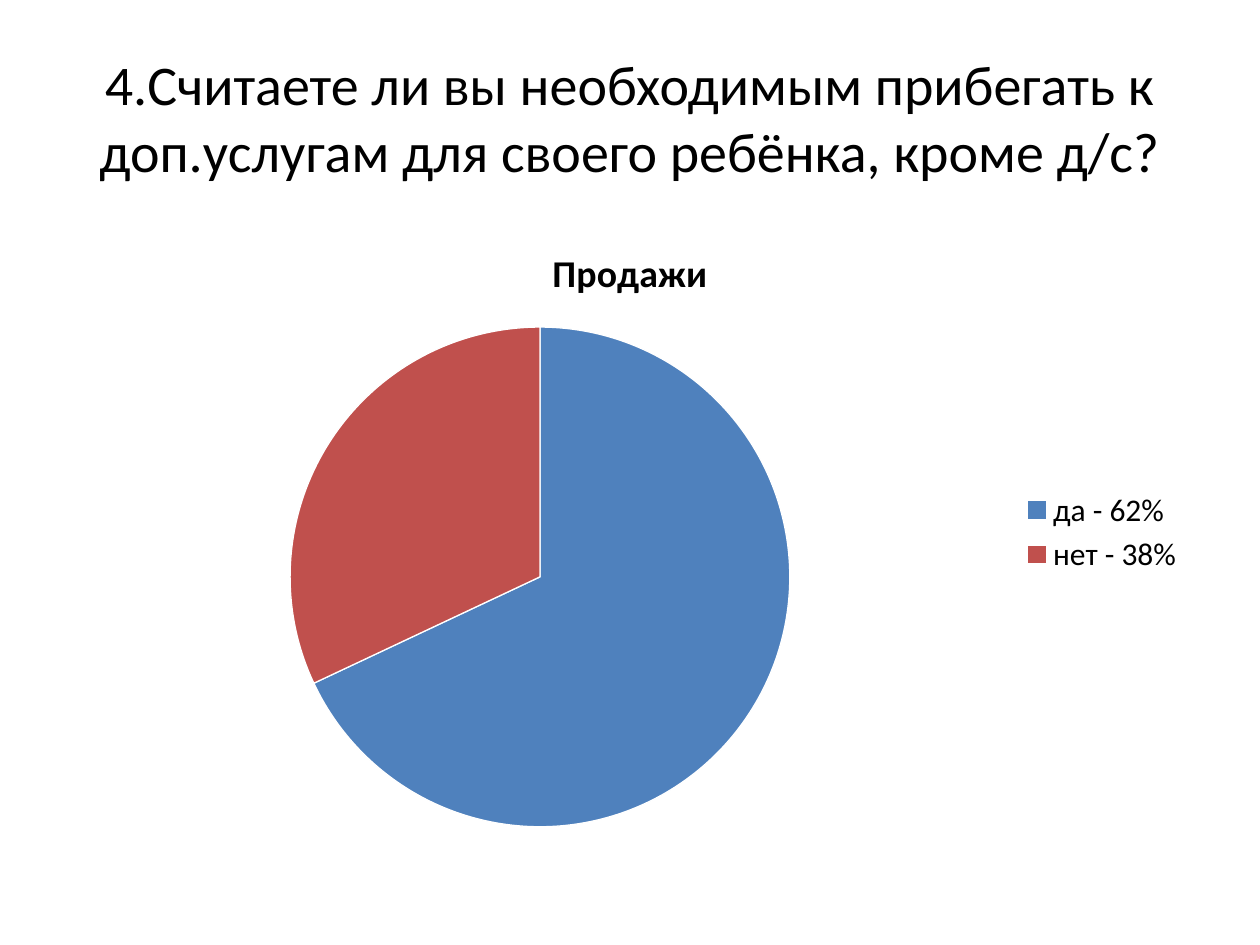
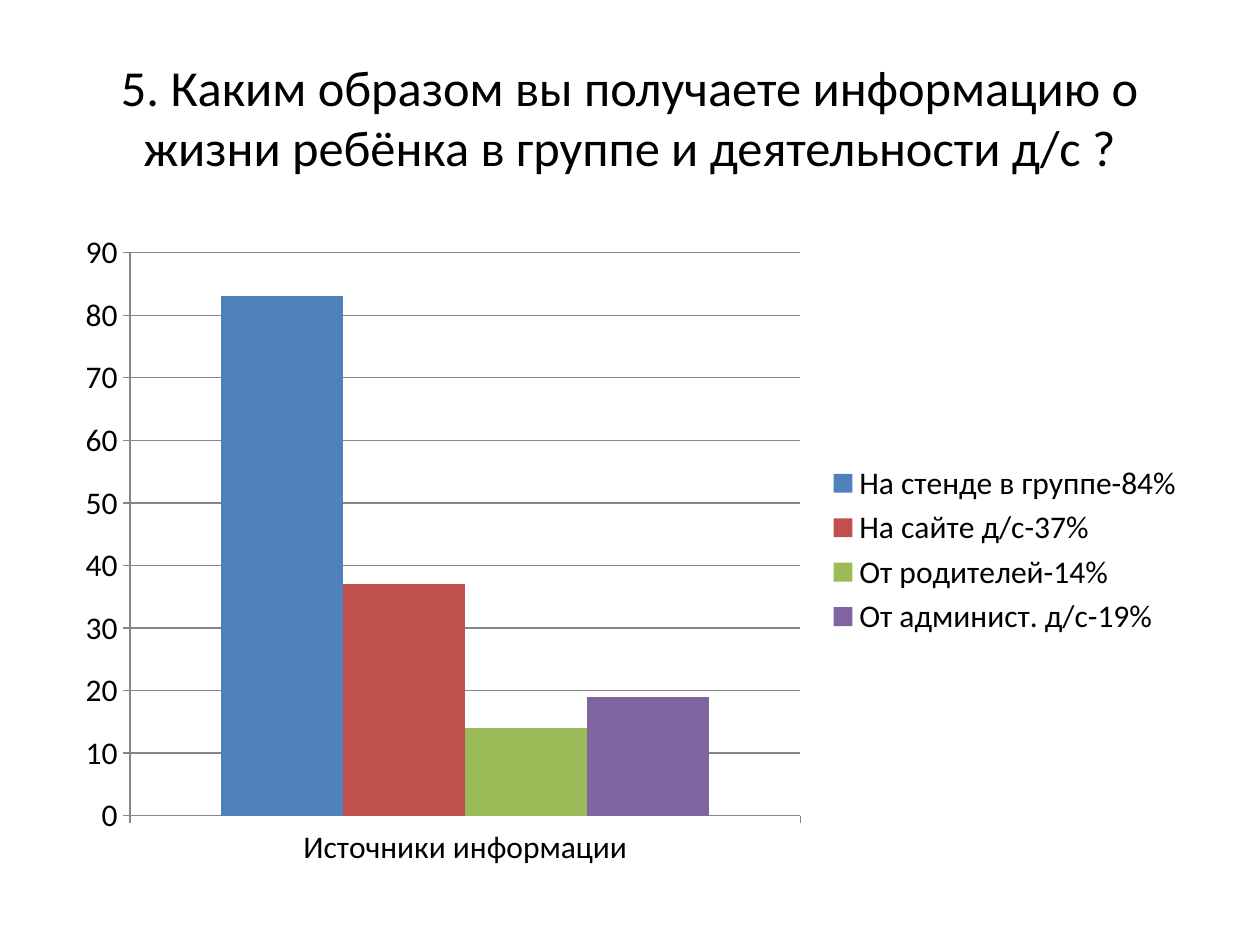
import pptx
import pptx.chart.data
import pptx.dml.color
import pptx.enum.chart
import pptx.enum.text
import pptx.util

Pt = pptx.util.Pt
CHART_TYPE = pptx.enum.chart.XL_CHART_TYPE

# Content
FONT = "Calibri"
COLORS = {"text": "000000", "axis": "868686", "paper": "FFFFFF",
          "blue": "4F81BD", "red": "C0504D", "green": "9BBB59", "violet": "8064A2"}
SERIES_COLORS = ("blue", "red", "green", "violet")

QUESTIONS = [
    {"question": "4.Считаете ли вы необходимым прибегать к доп.услугам "
                 "для своего ребёнка, кроме д/с?",
     "size": 32, "kind": CHART_TYPE.PIE, "height": 356.4,
     "categories": ["да - 62%", "нет - 38%"],
     "answers": [("Продажи", [68, 32])]},
    {"question": "5. Каким образом вы получаете информацию о жизни ребёнка "
                 "в группе и деятельности д/с ?",
     "size": 28.8, "kind": CHART_TYPE.COLUMN_CLUSTERED, "height": 376.56,
     "categories": ["Источники информации"],
     "answers": [("На стенде в группе-84%", [83]), ("На сайте д/с-37%", [37]),
                 ("От родителей-14%", [14]), ("От админист. д/с-19%", [19])]},
]

# Shared layout
LEFT, WIDTH = 36, 648
TITLE_TOP, TITLE_HEIGHT = 21.6, 90
CHART_TOP = 126


def rgb(name):
    return pptx.dml.color.RGBColor.from_string(COLORS[name])


def style_font(font, size, bold=False):
    font.name, font.size, font.bold = FONT, Pt(size), bold
    font.color.rgb = rgb("text")


def paint(part, color):
    part.format.fill.solid()
    part.format.fill.fore_color.rgb = rgb(color)


def add_question(slide, text, size):
    title = slide.shapes.title
    title.left, title.top = Pt(LEFT), Pt(TITLE_TOP)
    title.width, title.height = Pt(WIDTH), Pt(TITLE_HEIGHT)
    frame = title.text_frame
    frame.text = text
    frame.word_wrap = True
    frame.auto_size = pptx.enum.text.MSO_AUTO_SIZE.NONE
    frame.vertical_anchor = pptx.enum.text.MSO_ANCHOR.MIDDLE
    frame.paragraphs[0].alignment = pptx.enum.text.PP_ALIGN.CENTER
    style_font(frame.paragraphs[0].runs[0].font, size)


def style_pie(chart):
    answers = chart.plots[0].series[0]
    chart.has_title = True
    heading = chart.chart_title.text_frame
    heading.text = answers.name
    style_font(heading.paragraphs[0].runs[0].font, 21.6, bold=True)
    chart.plots[0].vary_by_categories = True
    for index, _ in enumerate(answers.values):
        slice_ = answers.points[index]
        paint(slice_, SERIES_COLORS[index])
        slice_.format.line.color.rgb = rgb("paper")
        slice_.format.line.width = Pt(0.75)


def style_columns(chart):
    chart.has_title = False
    plot = chart.plots[0]
    plot.vary_by_categories = False
    plot.gap_width, plot.overlap = 150, 0
    for answer, color in zip(plot.series, SERIES_COLORS):
        paint(answer, color)
    chart.value_axis.has_major_gridlines = True
    for axis in (chart.category_axis, chart.value_axis):
        axis.major_tick_mark = pptx.enum.chart.XL_TICK_MARK.OUTSIDE
        axis.format.line.color.rgb = rgb("axis")
    chart.value_axis.major_gridlines.format.line.color.rgb = rgb("axis")


def add_answers(slide, item):
    data = pptx.chart.data.CategoryChartData()
    data.categories = item["categories"]
    for name, values in item["answers"]:
        data.add_series(name, values)
    chart = slide.shapes.add_chart(item["kind"], Pt(LEFT), Pt(CHART_TOP), Pt(WIDTH),
                                   Pt(item["height"]), data).chart
    style_font(chart.font, 18)
    chart.has_legend = True
    chart.legend.position = pptx.enum.chart.XL_LEGEND_POSITION.RIGHT
    chart.legend.include_in_layout = False
    if item["kind"] == CHART_TYPE.PIE:
        style_pie(chart)
    else:
        style_columns(chart)


def main():
    deck = pptx.Presentation()
    deck.slide_width, deck.slide_height = Pt(720), Pt(540)
    title_only = deck.slide_layouts[5]
    for item in QUESTIONS:
        slide = deck.slides.add_slide(title_only)
        add_question(slide, item["question"], item["size"])
        add_answers(slide, item)
    deck.save("out.pptx")


if __name__ == "__main__":
    main()
